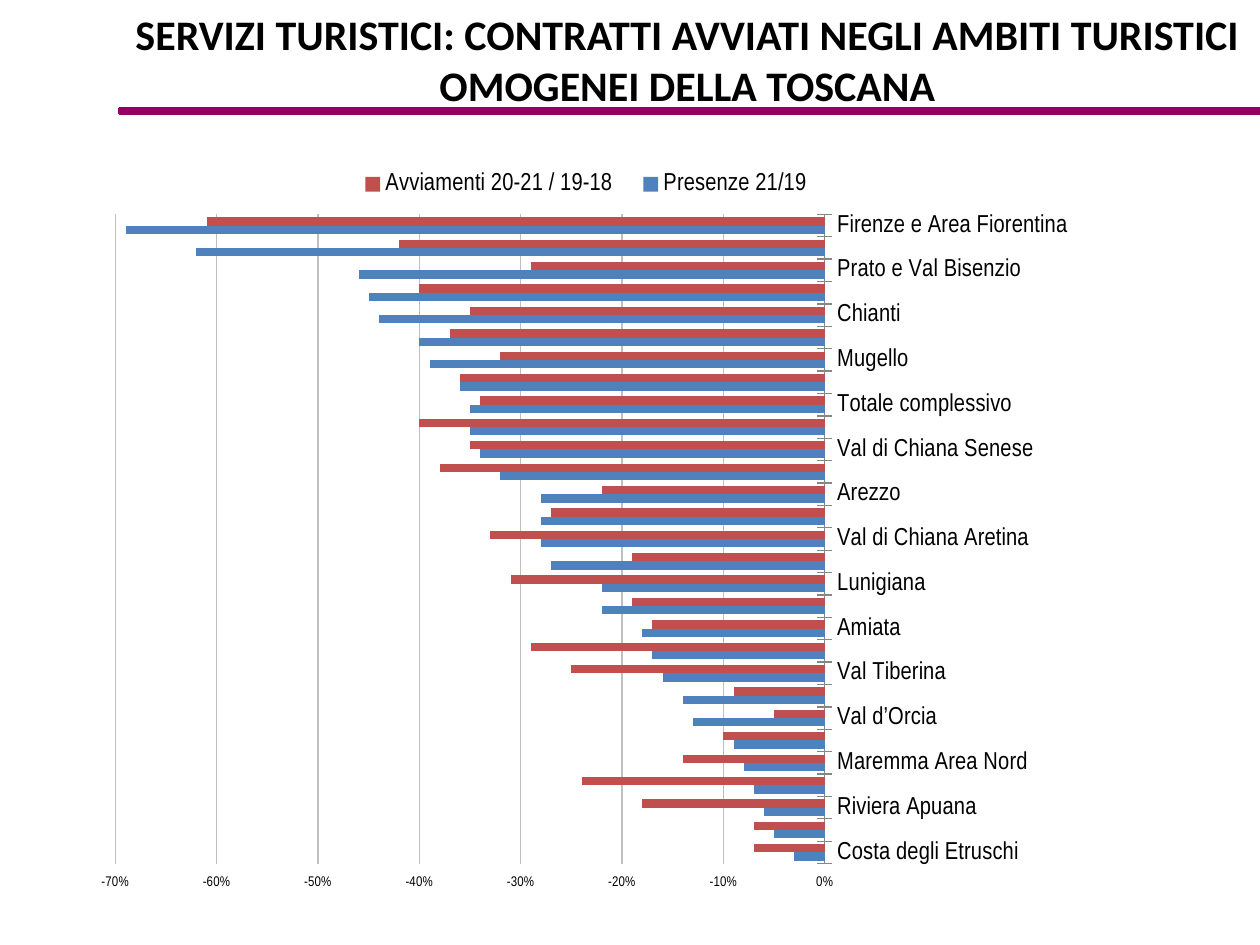
import pptx
import pptx.chart.data
import pptx.dml.color
import pptx.enum.chart
import pptx.enum.shapes
import pptx.enum.text
import pptx.oxml
import pptx.oxml.ns
import pptx.util

THEME = {
    "ink": "000000", "rule": "960064", "grid": "BFBFBF", "axis": "868686",
    "blue": "4F81BD", "red": "C0504D",
    "head": 24, "label": 14, "tick": 8,
    "title": "Calibri", "chart": "Arial Narrow",
}
Pt = pptx.util.Pt
kinds = pptx.enum.chart

deck = pptx.Presentation()
deck.slide_width = pptx.util.Inches(10)
deck.slide_height = pptx.util.Inches(7.5)
slide = deck.slides.add_slide(deck.slide_layouts[6])
wide, high = deck.slide_width, deck.slide_height


def tint(name):
    return pptx.dml.color.RGBColor.from_string(THEME[name])


def write(text, x, y, w, h, size="head", font="title", color="ink", bold=True):
    box = slide.shapes.add_textbox(int(x * wide), int(y * high), int(w * wide), int(h * high))
    frame = box.text_frame
    frame.word_wrap = True
    frame.vertical_anchor = pptx.enum.text.MSO_ANCHOR.MIDDLE
    line = frame.paragraphs[0]
    line.alignment = pptx.enum.text.PP_ALIGN.CENTER
    run = line.add_run()
    run.text = text
    run.font.size = Pt(THEME[size])
    run.font.name = THEME[font]
    run.font.bold = bold
    run.font.color.rgb = tint(color)


rule = slide.shapes.add_shape(
    pptx.enum.shapes.MSO_SHAPE.RECTANGLE,
    int(0.095 * wide), int(0.115 * high), int(0.905 * wide), int(0.005 * high))
rule.shadow.inherit = False
rule.fill.solid()
rule.fill.fore_color.rgb = tint("rule")
rule.line.color.rgb = tint("rule")
rule.line.width = Pt(2)

write("SERVIZI TURISTICI: CONTRATTI AVVIATI NEGLI AMBITI TURISTICI OMOGENEI DELLA TOSCANA",
      0.095, 0.016, 0.901, 0.093)

rows = [
    ("Costa degli Etruschi", -0.03, -0.07),
    ("Isola d’Elba", -0.05, -0.07),
    ("Riviera Apuana", -0.06, -0.18),
    ("Livorno", -0.07, -0.24),
    ("Maremma Area Nord", -0.08, -0.14),
    ("Maremma", -0.09, -0.1),
    ("Val d’Orcia", -0.13, -0.05),
    ("Casentino", -0.14, -0.09),
    ("Val Tiberina", -0.16, -0.25),
    ("Valdarno Aretino", -0.17, -0.29),
    ("Amiata", -0.18, -0.17),
    ("Versilia", -0.22, -0.19),
    ("Lunigiana", -0.22, -0.31),
    ("Pistoia e Montagna Pistoiese", -0.27, -0.19),
    ("Val di Chiana Aretina", -0.28, -0.33),
    ("Terre di Valdelsa e dell’Etruria Volterrana", -0.28, -0.27),
    ("Arezzo", -0.28, -0.22),
    ("Garfagnana e Media Valle del Serchio", -0.32, -0.38),
    ("Val di Chiana Senese", -0.34, -0.35),
    ("Terre di Siena", -0.35, -0.4),
    ("Totale complessivo", -0.35, -0.34),
    ("Terre di Pisa", -0.36, -0.36),
    ("Mugello", -0.39, -0.32),
    ("Piana di Lucca", -0.4, -0.37),
    ("Chianti", -0.44, -0.35),
    ("Empolese Val d’Elsa e Montalbano", -0.45, -0.4),
    ("Prato e Val Bisenzio", -0.46, -0.29),
    ("Valdinievole", -0.62, -0.42),
    ("Firenze e Area Fiorentina", -0.69, -0.61),
]
areas, stays, hires = zip(*rows)
data = pptx.chart.data.CategoryChartData(number_format="0%")
data.categories = areas
data.add_series("Presenze 21/19", stays)
data.add_series("Avviamenti 20-21 / 19-18", hires)

chart = slide.shapes.add_chart(
    kinds.XL_CHART_TYPE.BAR_CLUSTERED,
    int(0.053 * wide), int(0.151 * high), int(0.877 * wide), int(0.799 * high), data).chart
chart.has_title = False
chart.font.size = Pt(THEME["tick"])
chart.font.name = THEME["chart"]
chart.font.color.rgb = tint("ink")

plot = chart.plots[0]
plot.gap_width = 70
plot.vary_by_categories = False
for series, color in zip(plot.series, ("blue", "red")):
    series.invert_if_negative = False
    series.format.fill.solid()
    series.format.fill.fore_color.rgb = tint(color)

names = chart.category_axis
names.major_tick_mark = kinds.XL_TICK_MARK.CROSS
names.tick_label_position = kinds.XL_TICK_LABEL_POSITION.HIGH
names.tick_labels.offset = 1000
names.tick_labels.font.size = Pt(THEME["label"])
names.format.line.color.rgb = tint("axis")

scale = chart.value_axis
scale.minimum_scale, scale.maximum_scale, scale.major_unit = -0.7, 0, 0.1
scale.major_tick_mark = kinds.XL_TICK_MARK.CROSS
scale.tick_labels.number_format = "0%"
scale.tick_labels.number_format_is_linked = False
scale.format.line.fill.background()
scale.major_gridlines.format.line.color.rgb = tint("grid")
scale.major_gridlines.format.line.width = Pt(0.75)

chart.has_legend = True
legend = chart.legend
legend.position = kinds.XL_LEGEND_POSITION.BOTTOM
legend.include_in_layout = False
legend.font.size = Pt(THEME["label"])

area = chart.plots[0]._element.getparent()
places = [
    (area, 0, '<c:layoutTarget val="inner"/>', (0.044, 0.095, 0.642, 0.86)),
    (legend._element, 1, "", (0.25, 0.02, 0.44, 0.07)),
]
for part, index, target, spot in places:
    for old in part.findall(pptx.oxml.ns.qn("c:layout")):
        part.remove(old)
    modes = "".join(f'<c:{side}Mode val="edge"/>' for side in "xy")
    sizes = "".join(f'<c:{side} val="{share}"/>' for side, share in zip("xywh", spot))
    part.insert(index, pptx.oxml.parse_xml(
        f'<c:layout {pptx.oxml.ns.nsdecls("c")}><c:manualLayout>'
        f'{target}{modes}{sizes}</c:manualLayout></c:layout>'))

deck.save("out.pptx")
